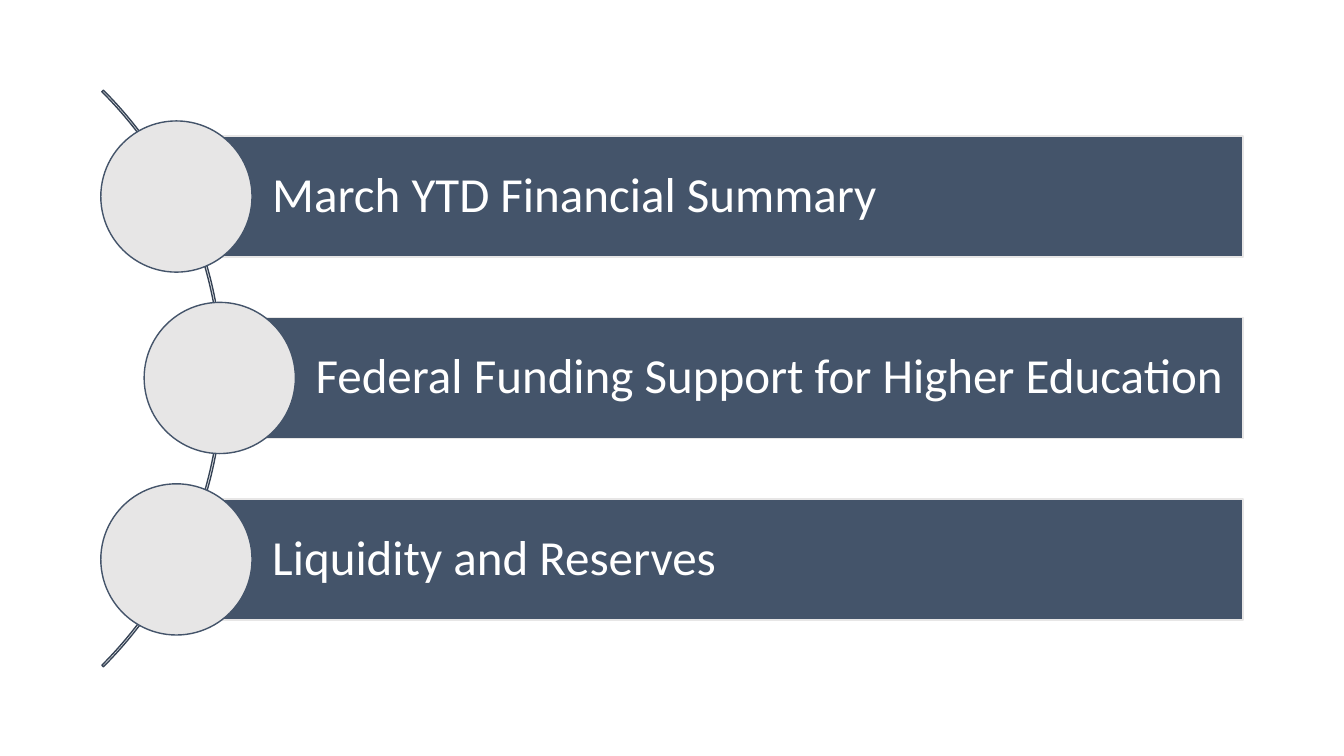
"""Build an agenda slide: three topic bars with circles along a thin arc."""
from pptx import Presentation
from pptx.dml.color import RGBColor
from pptx.enum import shapes, text
from pptx.util import Inches, Pt

NAVY = RGBColor(0x44, 0x54, 0x6A)
DARK = RGBColor(0x36, 0x43, 0x55)
GREY = RGBColor(0xE7, 0xE6, 0xE6)
WHITE = RGBColor(0xFF, 0xFF, 0xFF)

MIDDLE, PITCH, RIGHT = 3.75, 1.8, 12.33
BAR_HEIGHT, CIRCLE = 1.2, 1.5
TOPICS = [
    ("March YTD Financial Summary", 1.75),
    ("Federal Funding Support for Higher Education", 2.18),
    ("Liquidity and Reserves", 1.75),
]


def add_shape(s, kind, left, top, width, height, fill, line):
    sp = s.shapes.add_shape(kind, Inches(left), Inches(top), Inches(width), Inches(height))
    sp.shadow.inherit = False
    if fill is None:
        sp.fill.background()
    else:
        sp.fill.solid()
        sp.fill.fore_color.rgb = fill
    sp.line.color.rgb = line
    sp.line.width = Pt(1)
    return sp


def add_arc(s):
    sp = add_shape(s, shapes.MSO_SHAPE.BLOCK_ARC, -5.88, -0.29, 8.09, 8.09, None, DARK)
    for i, value in enumerate((189, 27, 0.00267)):
        sp.adjustments[i] = value


def add_bar(s, topic, left, center):
    sp = add_shape(s, shapes.MSO_SHAPE.RECTANGLE, left, center - BAR_HEIGHT / 2,
                   RIGHT - left, BAR_HEIGHT, NAVY, GREY)
    tf = sp.text_frame
    tf.word_wrap = True
    tf.vertical_anchor = text.MSO_ANCHOR.MIDDLE
    tf.margin_left = Inches(0.95)
    tf.margin_top = tf.margin_right = tf.margin_bottom = Inches(0.1)
    tf.text = topic
    p = tf.paragraphs[0]
    p.alignment = text.PP_ALIGN.LEFT
    p.line_spacing = 0.9
    r = p.runs[0]
    r.font.name = "Calibri"
    r.font.size = Pt(35)
    r.font.color.rgb = WHITE


def add_circle(s, center_x, center_y):
    add_shape(s, shapes.MSO_SHAPE.OVAL, center_x - CIRCLE / 2, center_y - CIRCLE / 2,
              CIRCLE, CIRCLE, GREY, NAVY)


def main():
    prs = Presentation()
    prs.slide_width, prs.slide_height = Inches(13.33), Inches(7.5)
    s = prs.slides.add_slide(prs.slide_layouts[6])
    add_arc(s)
    for i, (topic, left) in enumerate(TOPICS):
        center = MIDDLE + (i - 1) * PITCH
        add_bar(s, topic, left, center)
        add_circle(s, left, center)
    prs.save("out.pptx")


if __name__ == "__main__":
    main()
